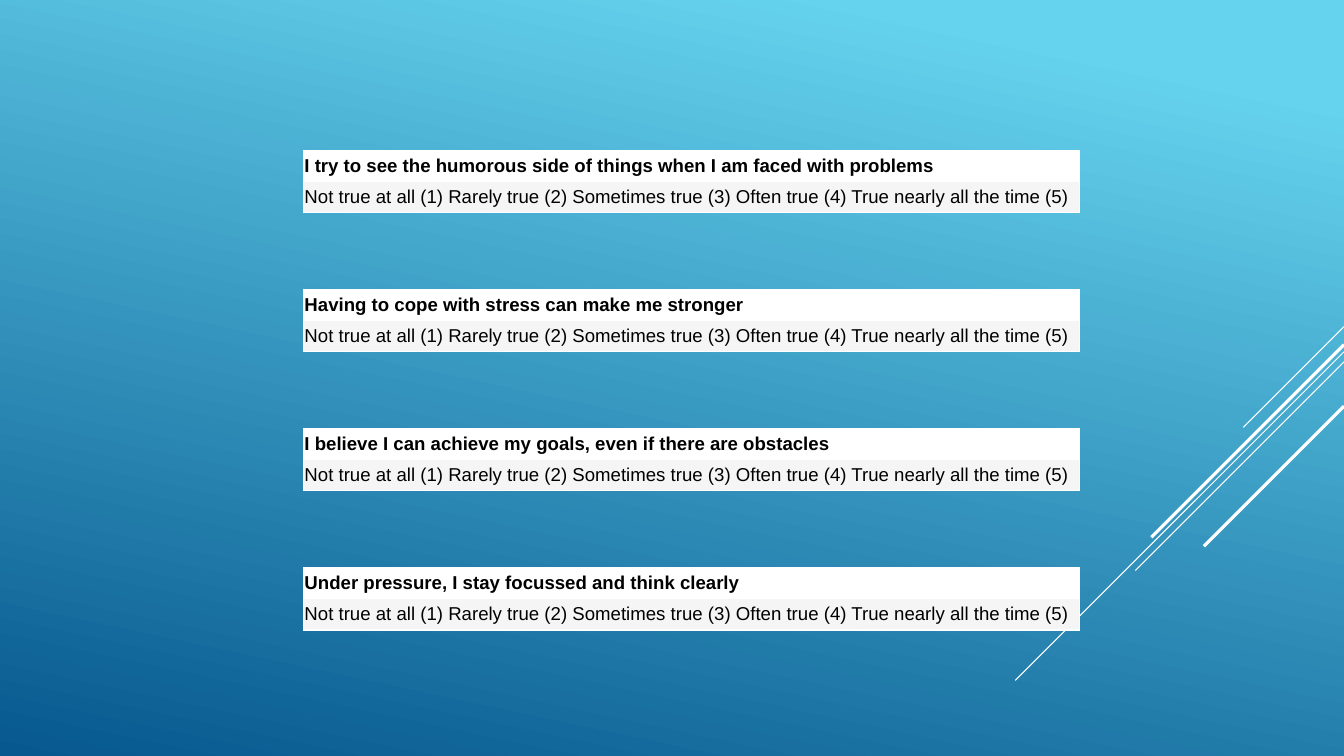
from dataclasses import dataclass

from lxml.etree import SubElement
from pptx import Presentation
from pptx.dml.color import RGBColor
from pptx.enum.shapes import MSO_CONNECTOR
from pptx.enum.text import MSO_ANCHOR
from pptx.oxml.ns import qn
from pptx.slide import Slide
from pptx.table import _Cell
from pptx.util import Inches, Pt

SLIDE_W, SLIDE_H = 13.33, 7.5
TABLE_LEFT, TABLE_TOP, TABLE_STEP = 3.01, 1.49, 1.38
TABLE_W, ROW_H = 7.7, 0.31
CELL_MARGIN = 0.01
WHITE, BLACK, PALE_GREY = "FFFFFF", "000000", "F5F5F5"
SCALE = ("Not true at all (1) Rarely true (2) Sometimes true (3) "
         "Often true (4) True nearly all the time (5)")
STATEMENTS = [
    "I try to see the humorous side of things when I am faced with problems",
    "Having to cope with stress can make me stronger",
    "I believe I can achieve my goals, even if there are obstacles",
    "Under pressure, I stay focussed and think clearly",
]


@dataclass
class Diagonal:
    """A 45° line running down and left from the right slide edge."""
    top: float
    run: float
    width: float


DIAGONALS = [
    Diagonal(3.24, 1.0, 0.75),
    Diagonal(3.49, 3.26, 0.75),
    Diagonal(3.59, 2.07, 0.75),
    Diagonal(3.42, 1.91, 2.25),
    Diagonal(4.03, 1.39, 2.25),
]


def color(hex_code: str) -> RGBColor:
    return RGBColor.from_string(hex_code)


def set_background(s: Slide) -> None:
    fill = s.background.fill
    fill.gradient()
    fill.gradient_angle = 258
    stops = [(0.1, "66D3EE"), (1.0, "06588E")]
    for stop, (position, hex_code) in zip(fill.gradient_stops, stops):
        stop.position = position
        stop.color.rgb = color(hex_code)


def add_diagonal(s: Slide, line: Diagonal) -> None:
    sp = s.shapes.add_connector(
        MSO_CONNECTOR.STRAIGHT, Inches(SLIDE_W), Inches(line.top),
        Inches(SLIDE_W - line.run), Inches(line.top + line.run))
    sp.line.color.rgb = color(WHITE)
    sp.line.width = Pt(line.width)
    SubElement(sp._element.spPr, qn("a:effectLst"))


def add_borders(cell: _Cell) -> None:
    tc_pr = cell._tc.get_or_add_tcPr()
    for side in ("lnL", "lnR", "lnT", "lnB"):
        ln = SubElement(tc_pr, qn(f"a:{side}"), w=str(Pt(1)))
        SubElement(SubElement(ln, qn("a:solidFill")), qn("a:srgbClr"), val=WHITE)


def fill_cell(cell: _Cell, text: str, background: str, bold: bool) -> None:
    add_borders(cell)
    cell.fill.solid()
    cell.fill.fore_color.rgb = color(background)
    cell.vertical_anchor = MSO_ANCHOR.MIDDLE
    cell.margin_left = cell.margin_right = Inches(CELL_MARGIN)
    cell.margin_top = cell.margin_bottom = Inches(CELL_MARGIN)
    p = cell.text_frame.paragraphs[0]
    p.text = text
    p.space_before = Pt(12)
    font = p.runs[0].font
    font.name = "Arial"
    font.size = Pt(13.3)
    font.bold = bold
    font.color.rgb = color(BLACK)


def add_question(s: Slide, statement: str, top: float) -> None:
    table = s.shapes.add_table(
        2, 1, Inches(TABLE_LEFT), Inches(top),
        Inches(TABLE_W), Inches(2 * ROW_H)).table
    fill_cell(table.cell(0, 0), statement, WHITE, True)
    fill_cell(table.cell(1, 0), SCALE, PALE_GREY, False)


def main() -> None:
    prs = Presentation()
    prs.slide_width, prs.slide_height = Inches(SLIDE_W), Inches(SLIDE_H)
    s = prs.slides.add_slide(prs.slide_layouts[6])
    set_background(s)
    for line in DIAGONALS:
        add_diagonal(s, line)
    for i, statement in enumerate(STATEMENTS):
        add_question(s, statement, TABLE_TOP + i * TABLE_STEP)
    prs.save("out.pptx")


if __name__ == "__main__":
    main()
